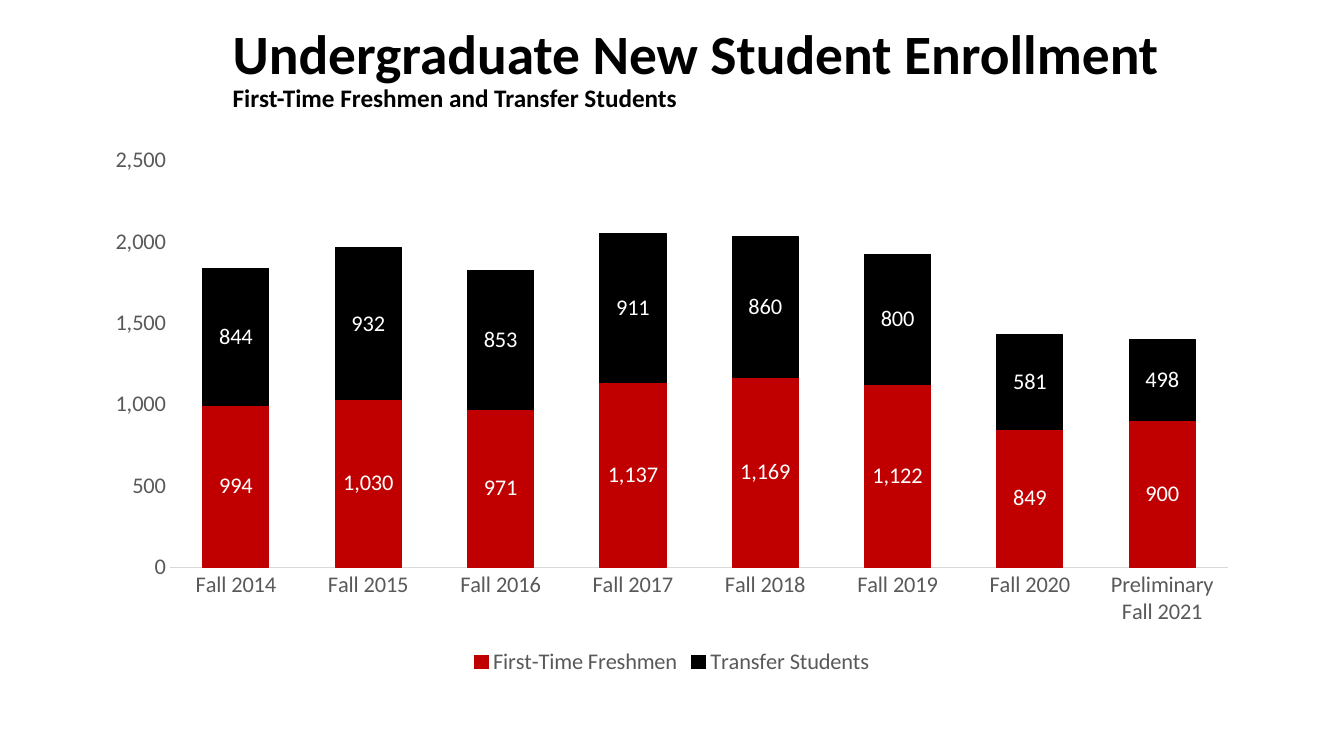
from dataclasses import dataclass

from lxml.etree import SubElement
from pptx import Presentation
from pptx.chart.data import CategoryChartData
from pptx.dml.color import RGBColor
from pptx.enum.chart import (
    XL_CHART_TYPE as ChartType,
    XL_LABEL_POSITION as LabelPosition,
    XL_LEGEND_POSITION as LegendPosition,
    XL_TICK_MARK as TickMark,
)
from pptx.enum.text import MSO_ANCHOR as Anchor, MSO_AUTO_SIZE as AutoSize, PP_ALIGN as Align
from pptx.oxml.ns import qn
from pptx.util import Pt


@dataclass(frozen=True)
class Theme:
    font: str = "Calibri"
    black: str = "000000"
    white: str = "FFFFFF"
    red: str = "C00000"
    label_gray: str = "595959"
    axis_gray: str = "D9D9D9"
    title_size: float = 39.6
    subtitle_size: float = 18
    chart_size: float = 16
    hairline: float = 0.75


@dataclass(frozen=True)
class StudentGroup:
    name: str
    enrollment: tuple[int, ...]
    color: str


THEME = Theme()
NUMBER_FORMAT = "#,##0"
HEADING_LINES = (
    ("Undergraduate New Student Enrollment", THEME.title_size),
    ("First-Time Freshmen and Transfer Students", THEME.subtitle_size),
)
TERMS = [f"Fall {year}" for year in range(2014, 2021)] + ["Preliminary Fall 2021"]
GROUPS = (
    StudentGroup("First-Time Freshmen",
                 (994, 1030, 971, 1137, 1169, 1122, 849, 900), THEME.red),
    StudentGroup("Transfer Students",
                 (844, 932, 853, 911, 860, 800, 581, 498), THEME.black),
)


def set_all(target, values: dict) -> None:
    for attribute, value in values.items():
        setattr(target, attribute, value)


def style_font(font, size: float, color: str, bold: bool = False) -> None:
    set_all(font, {"name": THEME.font, "size": Pt(size), "bold": bold})
    font.color.rgb = RGBColor.from_string(color)


def style_line(line, color: str) -> None:
    line.color.rgb = RGBColor.from_string(color)
    line.width = Pt(THEME.hairline)


def write_heading(heading) -> None:
    set_all(heading, {"left": Pt(159), "top": Pt(21), "width": Pt(739), "height": Pt(57.6)})
    frame = heading.text_frame
    set_all(frame, {"word_wrap": True, "auto_size": AutoSize.NONE,
                    "vertical_anchor": Anchor.MIDDLE})
    paragraph = frame.paragraphs[0]
    set_all(paragraph, {"alignment": Align.LEFT, "line_spacing": 0.9})
    for index, (wording, size) in enumerate(HEADING_LINES):
        if index:
            paragraph.add_line_break()
        run = paragraph.add_run()
        run.text = wording
        style_font(run.font, size, THEME.black, bold=True)
    # Keep the line break from enlarging the first line
    for line_break in paragraph._p.findall(qn("a:br")):
        SubElement(line_break, qn("a:rPr"), sz=str(round(THEME.title_size * 100)))


def style_group(series, group: StudentGroup) -> None:
    series.format.fill.solid()
    series.format.fill.fore_color.rgb = RGBColor.from_string(group.color)
    style_line(series.format.line, group.color)
    labels = series.data_labels
    set_all(labels, {"show_value": True, "number_format": NUMBER_FORMAT,
                     "number_format_is_linked": False, "position": LabelPosition.CENTER})
    style_font(labels.font, THEME.chart_size, THEME.white)


def style_axes(chart) -> None:
    terms_axis, enrollment_axis = chart.category_axis, chart.value_axis
    for axis in (terms_axis, enrollment_axis):
        set_all(axis, {"major_tick_mark": TickMark.NONE, "minor_tick_mark": TickMark.NONE,
                       "has_major_gridlines": False})
        style_font(axis.tick_labels.font, THEME.chart_size, THEME.label_gray)
    style_line(terms_axis.format.line, THEME.axis_gray)
    enrollment_axis.format.line.fill.background()
    set_all(enrollment_axis, {"minimum_scale": 0, "maximum_scale": 2500, "major_unit": 500})
    set_all(enrollment_axis.tick_labels, {"number_format": NUMBER_FORMAT,
                                          "number_format_is_linked": False})


def add_enrollment_chart(slide) -> None:
    enrollment = CategoryChartData(number_format=NUMBER_FORMAT)
    enrollment.categories = TERMS
    for group in GROUPS:
        enrollment.add_series(group.name, group.enrollment)
    chart = slide.shapes.add_chart(ChartType.COLUMN_STACKED, Pt(66), Pt(97), Pt(828),
                                   Pt(389), enrollment).chart
    style_font(chart.font, THEME.chart_size, THEME.black)
    set_all(chart, {"has_title": False, "has_legend": True})
    set_all(chart.legend, {"position": LegendPosition.BOTTOM, "include_in_layout": False})
    style_font(chart.legend.font, THEME.chart_size, THEME.label_gray)
    columns = chart.plots[0]
    set_all(columns, {"gap_width": 100, "overlap": 100, "vary_by_categories": False})
    for series, group in zip(columns.series, GROUPS):
        style_group(series, group)
    style_axes(chart)


def main() -> None:
    deck = Presentation()
    set_all(deck, {"slide_width": Pt(960), "slide_height": Pt(540)})
    slide = deck.slides.add_slide(deck.slide_layouts.get_by_name("Title Only"))
    slide.background.fill.solid()
    slide.background.fill.fore_color.rgb = RGBColor.from_string(THEME.white)

    # Heading
    write_heading(slide.shapes.title)

    # Stacked columns by term
    add_enrollment_chart(slide)

    deck.save("out.pptx")


if __name__ == "__main__":
    main()
